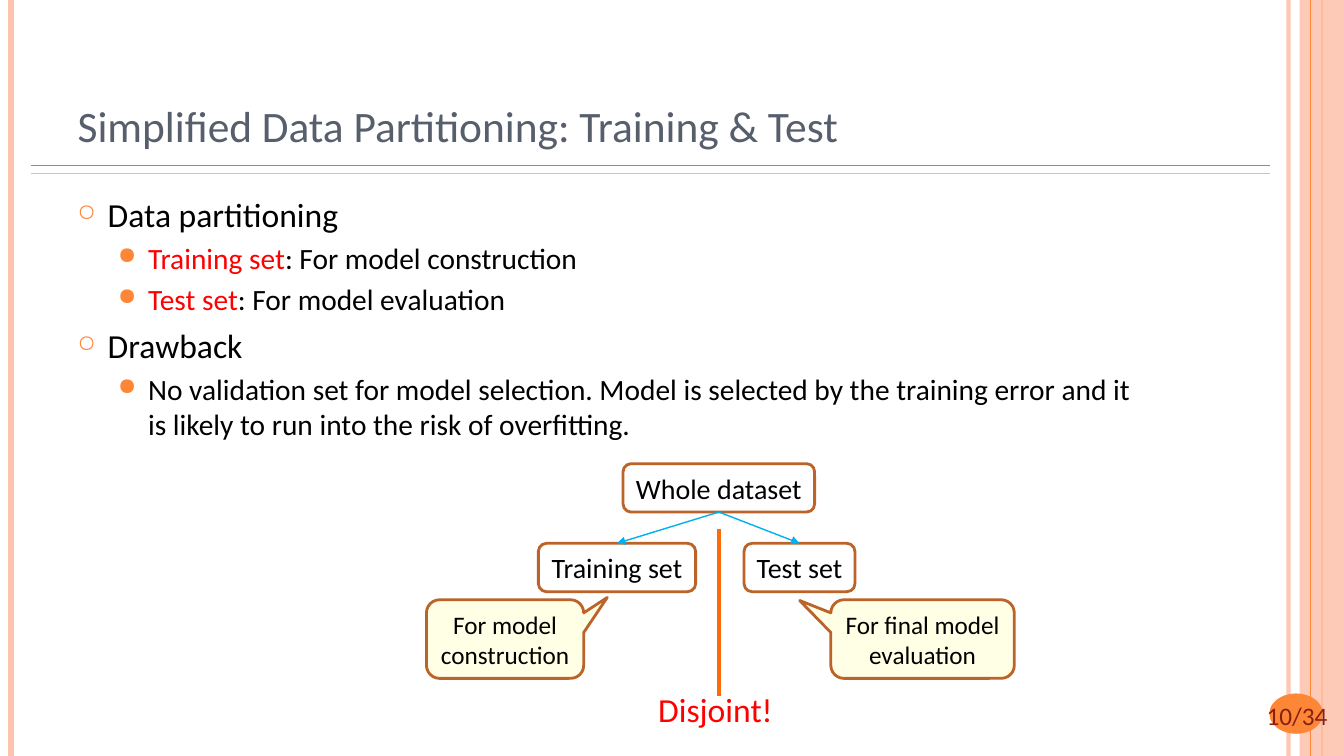
from dataclasses import dataclass
from typing import Optional

from lxml import etree
from pptx import Presentation
from pptx.dml.color import RGBColor
from pptx.enum.shapes import MSO_CONNECTOR, MSO_SHAPE
from pptx.enum.text import MSO_ANCHOR, MSO_AUTO_SIZE, PP_ALIGN
from pptx.oxml.ns import qn
from pptx.util import Emu, Pt

STRAIGHT = MSO_CONNECTOR.STRAIGHT
RECTANGLE, OVAL = MSO_SHAPE.RECTANGLE, MSO_SHAPE.OVAL
ROUNDED, CALLOUT = MSO_SHAPE.ROUNDED_RECTANGLE, MSO_SHAPE.ROUNDED_RECTANGULAR_CALLOUT
LEFT, CENTER = PP_ALIGN.LEFT, PP_ALIGN.CENTER
TOP, MIDDLE, BOTTOM = MSO_ANCHOR.TOP, MSO_ANCHOR.MIDDLE, MSO_ANCHOR.BOTTOM
NO_AUTOFIT = MSO_AUTO_SIZE.NONE

FONT = "Calibri"
PEACH = RGBColor(0xFE, 0xC3, 0xAE)
ORANGE = RGBColor(0xFE, 0x86, 0x37)
DEEP_ORANGE = RGBColor(0xFF, 0x6B, 0x0A)
LIGHT_ORANGE = RGBColor(0xFE, 0xB6, 0x87)
BROWN = RGBColor(0xBC, 0x63, 0x29)
MAROON = RGBColor(0x86, 0x21, 0x10)
SLATE = RGBColor(0x57, 0x5F, 0x6D)
SKY = RGBColor(0x00, 0xB0, 0xF0)
CREAM = RGBColor(0xFF, 0xFF, 0xCC)
RED = RGBColor(0xFF, 0x00, 0x00)
BLACK = RGBColor(0x00, 0x00, 0x00)

WIDTH, HEIGHT = 1333, 750


def px(value: int) -> Emu:
    """Convert px to EMU, at 100 px to the inch."""
    return Emu(value * 9144)


@dataclass
class Rule:
    start: tuple[int, int]
    end: tuple[int, int]
    color: RGBColor
    weight: float
    opacity: int = 100


@dataclass
class Node:
    lines: list[str]
    box: tuple[int, int, int, int]
    size: int = 20
    pointer: Optional[tuple[float, float]] = None


@dataclass
class Bullet:
    text: str
    level: int = 0
    term: str = ""


@dataclass
class BulletStyle:
    symbol: str
    percent: int
    indent: int
    size: int
    space_before: float


BULLET_STYLES = [BulletStyle("○", 70, 30, 24, 6), BulletStyle("●", 80, 70, 21, 4.2)]

FRAME_RULES = [
    Rule((1278, 0), (1278, HEIGHT), PEACH, 3, 93),
    Rule((11, 0), (11, HEIGHT), PEACH, 4.5),
    Rule((1311, 0), (1311, HEIGHT), ORANGE, 1.5),
]
FRONT_RULES = [
    Rule((1300, 0), (1300, HEIGHT), ORANGE, 0.75),
    Rule((31, 164), (1260, 164), DEEP_ORANGE, 1),
    Rule((31, 172), (1260, 172), LIGHT_ORANGE, 1),
]
DIVIDER = Rule((713, 525), (713, 690), DEEP_ORANGE, 3)

BULLETS = [
    Bullet("Data partitioning"),
    Bullet(": For model construction", 1, "Training set"),
    Bullet(": For model evaluation", 1, "Test set"),
    Bullet("Drawback"),
    Bullet("No validation set for model selection. Model is selected by the training "
           "error and it is likely to run into the risk of overfitting.", 1),
]

WHOLE = Node(["Whole dataset"], (618, 460, 190, 48))
SUBSETS = [
    Node(["Training set"], (534, 539, 156, 48)),
    Node(["Test set"], (738, 539, 110, 48)),
]
NOTES = [
    Node(["For final model", "evaluation"], (824, 595, 182, 78), 18, (-0.67, -0.49)),
    Node(["For model", "construction"], (423, 595, 156, 78), 18, (0.65, -0.53)),
]


def set_opacity(element, percent: int) -> None:
    color = next(element.iter(qn("a:srgbClr")))
    etree.SubElement(color, qn("a:alpha"), val=str(percent * 1000))


def style_paragraph(paragraph, size: float, color: RGBColor, align=LEFT) -> None:
    paragraph.alignment = align
    paragraph.font.name = FONT
    paragraph.font.size = Pt(size)
    paragraph.font.color.rgb = color


def add_line(slide, rule: Rule):
    line = slide.shapes.add_connector(STRAIGHT, *map(px, rule.start + rule.end))
    line.line.color.rgb = rule.color
    line.line.width = Pt(rule.weight)
    properties = line._element.spPr
    etree.SubElement(properties, qn("a:effectLst"))
    if rule.opacity < 100:
        set_opacity(properties, rule.opacity)
    return line


def add_filled(slide, kind, box: tuple[int, int, int, int], color: RGBColor):
    shape = slide.shapes.add_shape(kind, *map(px, box))
    shape.shadow.inherit = False
    shape.fill.solid()
    shape.fill.fore_color.rgb = color
    shape.line.fill.background()
    return shape


def add_label(slide, text: str, box: tuple[int, int, int, int], size: int,
              color: RGBColor, align=LEFT, wrap: bool = False) -> None:
    frame = slide.shapes.add_textbox(*map(px, box)).text_frame
    frame.word_wrap = wrap
    frame.text = text
    style_paragraph(frame.paragraphs[0], size, color, align)


def add_node(slide, node: Node):
    kind = CALLOUT if node.pointer else ROUNDED
    shape = slide.shapes.add_shape(kind, *map(px, node.box))
    shape.shadow.inherit = False
    if node.pointer:
        shape.adjustments[0], shape.adjustments[1] = node.pointer
        shape.fill.solid()
        shape.fill.fore_color.rgb = CREAM
        set_opacity(shape._element.spPr, 50)
    else:
        shape.fill.background()
    shape.line.color.rgb = BROWN
    shape.line.width = Pt(2)
    frame = shape.text_frame
    frame.word_wrap = False
    frame.vertical_anchor = MIDDLE
    frame.text = "\n".join(node.lines)
    for paragraph in frame.paragraphs:
        style_paragraph(paragraph, node.size, BLACK, CENTER)
    return shape


def add_arrow(slide, source, target) -> None:
    arrow = add_line(slide, Rule((0, 0), (0, 0), SKY, 1))
    arrow.begin_connect(source, 2)
    arrow.end_connect(target, 0)
    etree.SubElement(arrow.line._get_or_add_ln(), qn("a:tailEnd"), type="triangle")


def add_bullets(slide, bullets: list[Bullet], box: tuple[int, int, int, int]) -> None:
    frame = slide.shapes.add_textbox(*map(px, box)).text_frame
    frame.word_wrap = True
    for index, bullet in enumerate(bullets):
        style = BULLET_STYLES[bullet.level]
        paragraph = frame.add_paragraph() if index else frame.paragraphs[0]
        paragraph.level = bullet.level
        properties = paragraph._p.get_or_add_pPr()
        properties.set("marL", str(px(style.indent)))
        properties.set("indent", str(px(-30)))
        bullet_color = etree.SubElement(properties, qn("a:buClr"))
        etree.SubElement(bullet_color, qn("a:srgbClr"), val=str(ORANGE))
        etree.SubElement(properties, qn("a:buSzPct"), val=str(style.percent * 1000))
        etree.SubElement(properties, qn("a:buChar"), char=style.symbol)
        if index:
            paragraph.space_before = Pt(style.space_before)
        style_paragraph(paragraph, style.size, BLACK)
        if bullet.term:
            term = paragraph.add_run()
            term.text = bullet.term
            term.font.color.rgb = RED
        paragraph.add_run().text = bullet.text


def add_title(slide, text: str, box: tuple[int, int, int, int]) -> None:
    title = slide.shapes.title
    title.left, title.top, title.width, title.height = map(px, box)
    frame = title.text_frame
    frame.auto_size = NO_AUTOFIT
    frame.vertical_anchor = BOTTOM
    frame.text = text
    style_paragraph(frame.paragraphs[0], 31, SLATE)


def main() -> None:
    presentation = Presentation()
    presentation.slide_width, presentation.slide_height = px(WIDTH), px(HEIGHT)
    slide = presentation.slides.add_slide(presentation.slide_layouts[5])

    # Frame and page number
    for rule in FRAME_RULES:
        add_line(slide, rule)
    band = add_filled(slide, RECTANGLE, (1289, 0, 44, HEIGHT), PEACH)
    set_opacity(band._element.spPr, 87)
    for rule in FRONT_RULES:
        add_line(slide, rule)
    add_filled(slide, OVAL, (1259, 688, 53, 40), ORANGE)
    add_label(slide, "10/34", (1226, 690, 121, 40), 18, MAROON, CENTER, True)

    # Title and bullets
    add_title(slide, "Simplified Data Partitioning: Training & Test", (67, 30, 1089, 125))
    add_bullets(slide, BULLETS, (67, 187, 1089, 521))

    # Partition diagram
    whole = add_node(slide, WHOLE)
    for subset in SUBSETS:
        add_arrow(slide, whole, add_node(slide, subset))
    for note in NOTES:
        add_node(slide, note)
    add_line(slide, DIVIDER)
    add_label(slide, "Disjoint!", (643, 679, 135, 50), 24, RED)

    presentation.save("out.pptx")


if __name__ == "__main__":
    main()
